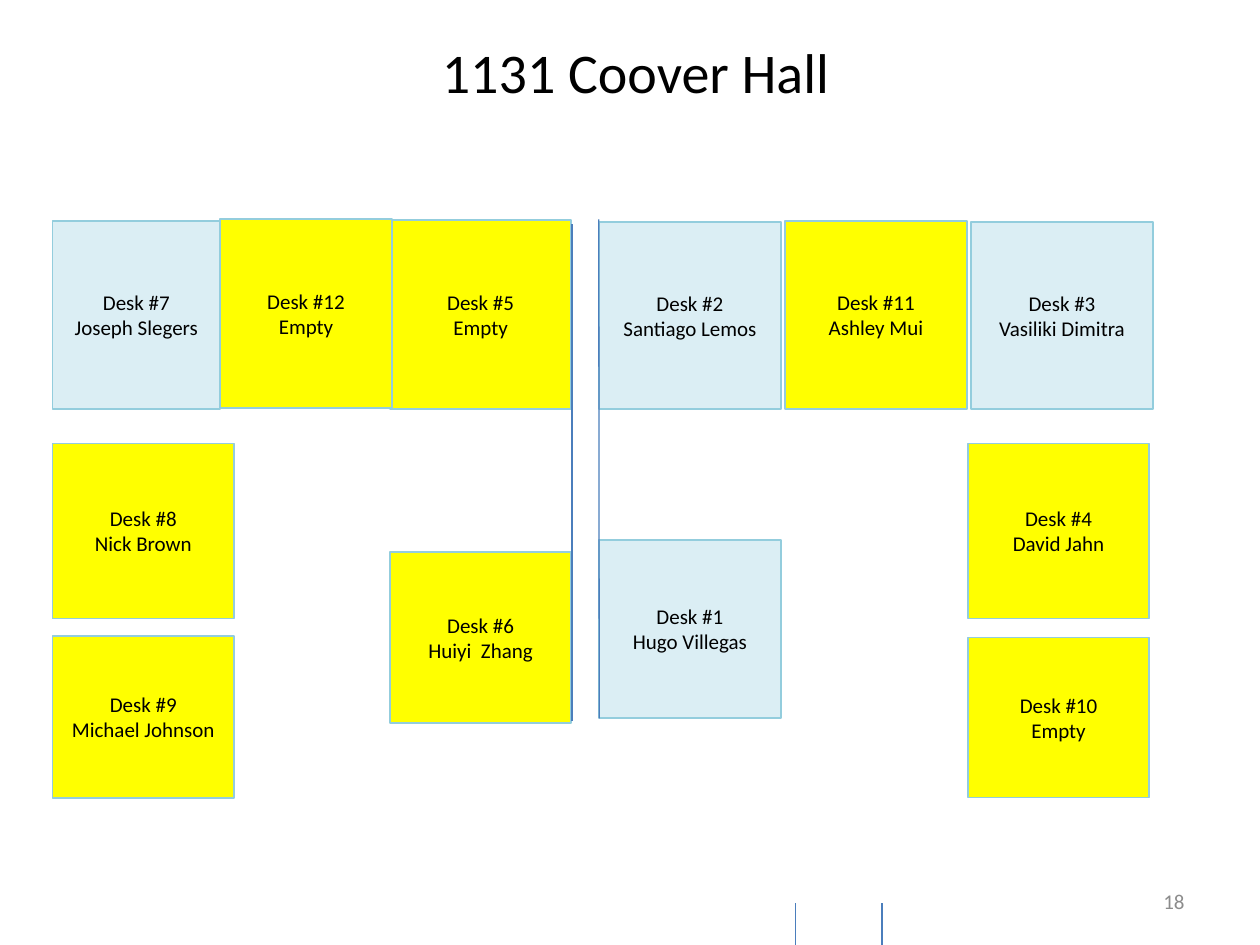
from pptx import Presentation
from pptx.dml.color import RGBColor
from pptx.enum.shapes import MSO_CONNECTOR as Connector, MSO_SHAPE as Shape
from pptx.enum.text import MSO_ANCHOR as Anchor, PP_ALIGN as Align
from pptx.oxml.ns import qn
from pptx.util import Cm, Pt
from lxml import etree

YELLOW = RGBColor(0xFF, 0xFF, 0x00)
PALE_BLUE = RGBColor(0xDB, 0xEE, 0xF4)
BORDER = RGBColor(0x93, 0xCD, 0xDD)
WALL = RGBColor(0x4B, 0x7E, 0xBC)
BLACK = RGBColor(0x00, 0x00, 0x00)
GRAY = RGBColor(0x8C, 0x8C, 0x8C)

deck = Presentation()
deck.slide_width, deck.slide_height = Cm(25.4), Cm(19.05)
page = deck.slides.add_slide(deck.slide_layouts[6])


def write(box, lines, size, color, align, anchor):
    frame = box.text_frame
    frame.word_wrap = True
    frame.vertical_anchor = anchor
    frame.text = "\n".join(lines)
    for para in frame.paragraphs:
        para.alignment = align
        para.font.name = "Calibri"
        para.font.size = Pt(size)
        para.font.color.rgb = color


WIDE = 3.66
desks = [
    (10, "Empty", YELLOW, 19.51, 12.85, WIDE, 3.23),
    (4, "David Jahn", YELLOW, 19.51, 8.94, WIDE, 3.53),
    (3, "Vasiliki Dimitra", PALE_BLUE, 19.58, 4.47, WIDE, 3.78),
    (11, "Ashley Mui", YELLOW, 15.83, 4.45, WIDE, 3.8),
    (2, "Santiago Lemos", PALE_BLUE, 12.08, 4.47, WIDE, 3.78),
    (5, "Empty", YELLOW, 7.86, 4.44, WIDE, 3.8),
    (7, "Joseph Slegers", PALE_BLUE, 1.06, 4.45, 3.38, 3.8),
    (8, "Nick Brown", YELLOW, 1.06, 8.94, WIDE, 3.53),
    (6, "Huiyi  Zhang", YELLOW, 7.86, 11.13, WIDE, 3.45),
    (1, "Hugo Villegas", PALE_BLUE, 12.08, 10.89, WIDE, 3.58),
    (9, "Michael Johnson", YELLOW, 1.06, 12.82, WIDE, 3.27),
    (12, "Empty", YELLOW, 4.44, 4.42, 3.46, 3.8),
]
for number, person, fill, *place in desks:
    box = page.shapes.add_shape(Shape.RECTANGLE, *map(Cm, place))
    box.shadow.inherit = False
    box.fill.solid()
    box.fill.fore_color.rgb = fill
    box.line.color.rgb = BORDER
    box.line.width = Pt(1)
    write(box, [f"Desk #{number}", person], 12, BLACK, Align.CENTER, Anchor.MIDDLE)

walls = [
    (16.03, 18.21, 16.03, 19.05),
    (17.78, 18.21, 17.78, 19.05),
    (11.53, 4.52, 11.53, 14.53),
    (12.07, 4.42, 12.08, 14.48),
]
for ends in walls:
    wall = page.shapes.add_connector(Connector.STRAIGHT, *map(Cm, ends))
    wall.line.color.rgb = WALL
    wall.line.width = Pt(0.75)
    etree.SubElement(wall.element.spPr, qn("a:effectLst"))

title = page.shapes.add_textbox(Cm(6.78), Cm(0.64), Cm(12.07), Cm(1.63))
write(title, ["1131 Coover Hall"], 32, BLACK, Align.CENTER, Anchor.TOP)

page_number = page.shapes.add_textbox(Cm(18.21), Cm(17.65), Cm(5.92), Cm(1.02))
write(page_number, ["18"], 12, GRAY, Align.RIGHT, Anchor.MIDDLE)

deck.save("out.pptx")
